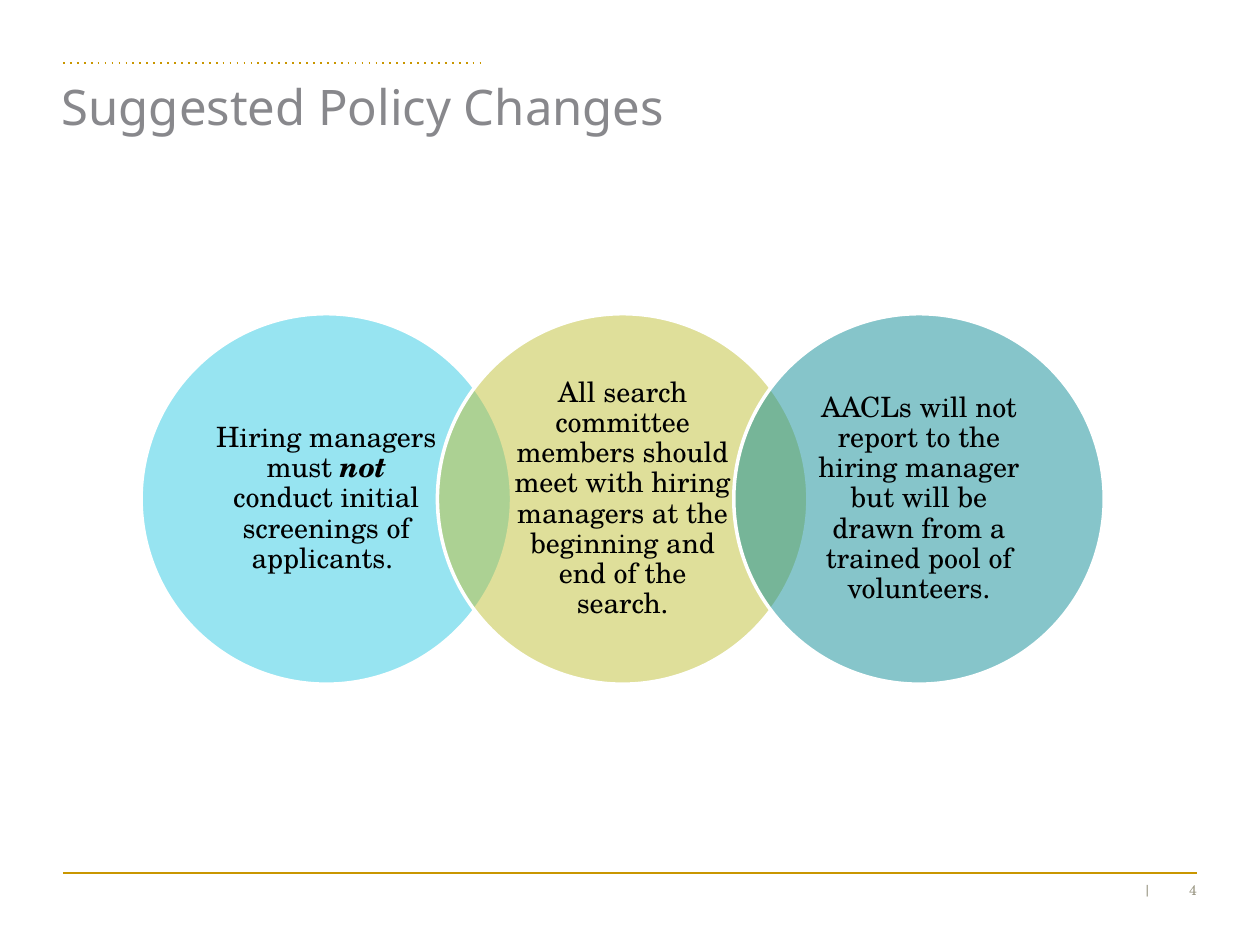
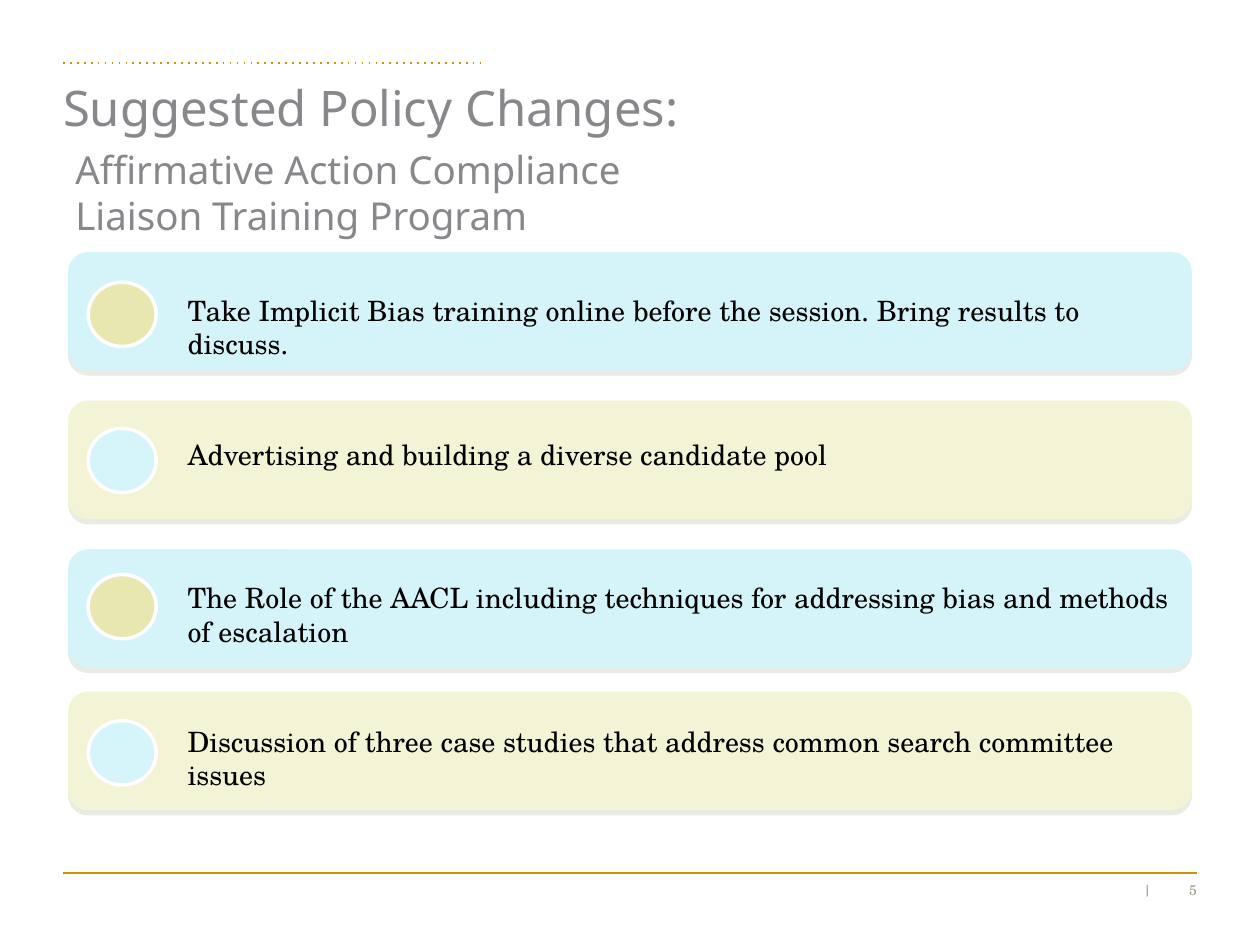
from lxml import etree
from pptx import Presentation
from pptx.dml.color import RGBColor
from pptx.enum import shapes, text
from pptx.oxml import ns
from pptx.util import Inches, Pt

COLORS = {
    "gold": "C99600", "stone": "999683", "title": "88888C",
    "black": "000000", "white": "FFFFFF",
    "cyan": "31CBE5", "olive": "C1C037", "teal": "0E8D97",
    "pale cyan": "D4F4FA", "pale olive": "F3F3D5",
    "dot olive": "E7E7AF", "dot cyan": "D6F5FA",
}
HEAD_FONT, BODY_FONT = "Noto Sans", "TeX Gyre Schola"


def rgb(name):
    return RGBColor.from_string(COLORS[name])


def add_xml(parent, tag, **attrs):
    child = etree.SubElement(parent, ns.qn(tag))
    for key, value in attrs.items():
        child.set(key, str(value))
    return child


class Deck:
    """Holds the presentation, its style and the slide being drawn."""

    def __init__(self):
        self.prs = Presentation()
        self.prs.slide_width, self.prs.slide_height = Inches(10), Inches(7.5)
        self.s = None

    def new_slide(self, title, box, number):
        """Start a slide with the shared rules, footer and title."""
        self.s = self.prs.slides.add_slide(self.prs.slide_layouts[5])
        self.rule(0.5, 3.82, 0.5, dotted=True)
        self.rule(0.5, 9.5, 6.93)
        for left, width, label in ((9.33, 0.17, str(number)), (9.1, 0.04, "|")):
            self.text_box((left, 7, width, 0.13), label, 8, "stone",
                          margins=(0, 0), align=text.PP_ALIGN.RIGHT, wrap=False)
        sp = self.s.shapes.title
        sp.left, sp.top, sp.width, sp.height = map(Inches, box)
        self.set_text(sp.text_frame, [title], 28, "title", HEAD_FONT,
                      margins=(0, 0), spacing=0.95)

    def rule(self, start, end, top, dotted=False):
        line = self.s.shapes.add_connector(
            shapes.MSO_CONNECTOR.STRAIGHT,
            Inches(start), Inches(top), Inches(end), Inches(top))
        line.line.color.rgb = rgb("gold")
        line.line.width = Pt(1)
        properties = line._element.spPr
        if dotted:
            add_xml(properties.find(ns.qn("a:ln")), "a:prstDash", val="dot")
        add_xml(properties, "a:effectLst")

    def set_text(self, tf, runs, size, color, font=BODY_FONT,
                 margins=(0.1, 0.05), align=text.PP_ALIGN.LEFT,
                 anchor=text.MSO_ANCHOR.TOP, spacing=None, wrap=True):
        """Fill a text frame with one paragraph; every second run is bold italic."""
        tf.word_wrap = wrap
        tf.auto_size = text.MSO_AUTO_SIZE.NONE
        tf.vertical_anchor = anchor
        tf.margin_left = tf.margin_right = Inches(margins[0])
        tf.margin_top = tf.margin_bottom = Inches(margins[1])
        p = tf.paragraphs[0]
        p.alignment, p.line_spacing = align, spacing
        p.font.name, p.font.size = font, Pt(size)
        p.font.color.rgb = rgb(color)
        for i, words in enumerate(runs):
            r = p.add_run()
            r.text = words
            if i % 2:
                r.font.bold = r.font.italic = True

    def text_box(self, box, words, size, color, font=BODY_FONT, **style):
        sp = self.s.shapes.add_textbox(*map(Inches, box))
        self.set_text(sp.text_frame, [words], size, color, font, **style)

    def shape(self, kind, box, fill, outlined=False):
        sp = self.s.shapes.add_shape(kind, *map(Inches, box))
        sp.shadow.inherit = False
        sp.fill.solid()
        sp.fill.fore_color.rgb = rgb(fill)
        if outlined:
            sp.line.color.rgb = rgb("white")
            sp.line.width = Pt(2)
        else:
            sp.line.fill.background()
        return sp

    def dot(self, box, fill):
        return self.shape(shapes.MSO_SHAPE.OVAL, box, fill, outlined=True)

    def venn_circle(self, box, fill, runs):
        sp = self.dot(box, fill)
        color = sp._element.spPr.find(ns.qn("a:solidFill"))[0]
        add_xml(color, "a:alpha", val=50000)
        self.set_text(sp.text_frame, runs, 16, "black", margins=(0.16, 0.02),
                      align=text.PP_ALIGN.CENTER,
                      anchor=text.MSO_ANCHOR.MIDDLE, spacing=0.9)

    def bar(self, box, fill):
        """Add a rounded bar with a faint hard shadow below it."""
        sp = self.shape(shapes.MSO_SHAPE.ROUNDED_RECTANGLE, box, fill)
        sp.adjustments[0] = 0.17
        effects = sp._element.spPr.find(ns.qn("a:effectLst"))
        shadow = add_xml(effects, "a:outerShdw", blurRad=0, dist=Pt(3),
                         dir=90 * 60000, algn="t", rotWithShape=0)
        color = add_xml(shadow, "a:srgbClr", val=COLORS["stone"])
        add_xml(color, "a:alpha", val=20000)


def policy_circles(deck):
    deck.new_slide("Suggested Policy Changes", (0.49, 0.64, 7.06, 1.34), 4)
    policies = (
        ("cyan", ["Hiring managers must ", "not",
                  " conduct initial screenings of applicants. "]),
        ("olive", ["All search committee members should meet with hiring "
                   "managers at the beginning and end of the search."]),
        ("teal", ["AACLs will not report to the hiring manager but will be "
                  "drawn from a trained pool of volunteers."]),
    )
    size = 2.94
    for i, (fill, runs) in enumerate(policies):
        deck.venn_circle((1.12 + 0.8 * size * i, 2.49, size, size), fill, runs)


def training_program(deck):
    deck.new_slide("Suggested Policy Changes:", (0.5, 0.65, 8.41, 0.56), 5)
    topics = (
        (2.0, 7.88, "Take Implicit Bias training online before the session. "
                    "Bring results to discuss."),
        (3.18, 7.88, "Advertising and building a diverse candidate pool"),
        (4.36, 8.04, "The Role of the AACL including techniques for addressing "
                     "bias and methods of escalation"),
        (5.49, 7.88, "Discussion of three case studies that address common "
                     "search committee issues"),
    )
    fills = (("pale cyan", "dot olive"), ("pale olive", "dot cyan"))
    for i, (top, width, topic) in enumerate(topics):
        bar_fill, dot_fill = fills[i % 2]
        deck.bar((0.54, top, 8.92, 0.94), bar_fill)
        deck.dot((0.7, 2.24 + 1.16 * i, 0.54, 0.51), dot_fill)
        deck.text_box((1.39, 2.28 + 1.14 * i, width, 0.77), topic, 16, "black")
    deck.text_box((0.5, 1.11, 5, 0.84),
                  "Affirmative Action Compliance Liaison Training Program",
                  22, "title", HEAD_FONT)


def main():
    deck = Deck()
    policy_circles(deck)
    training_program(deck)
    deck.prs.save("out.pptx")


if __name__ == "__main__":
    main()
